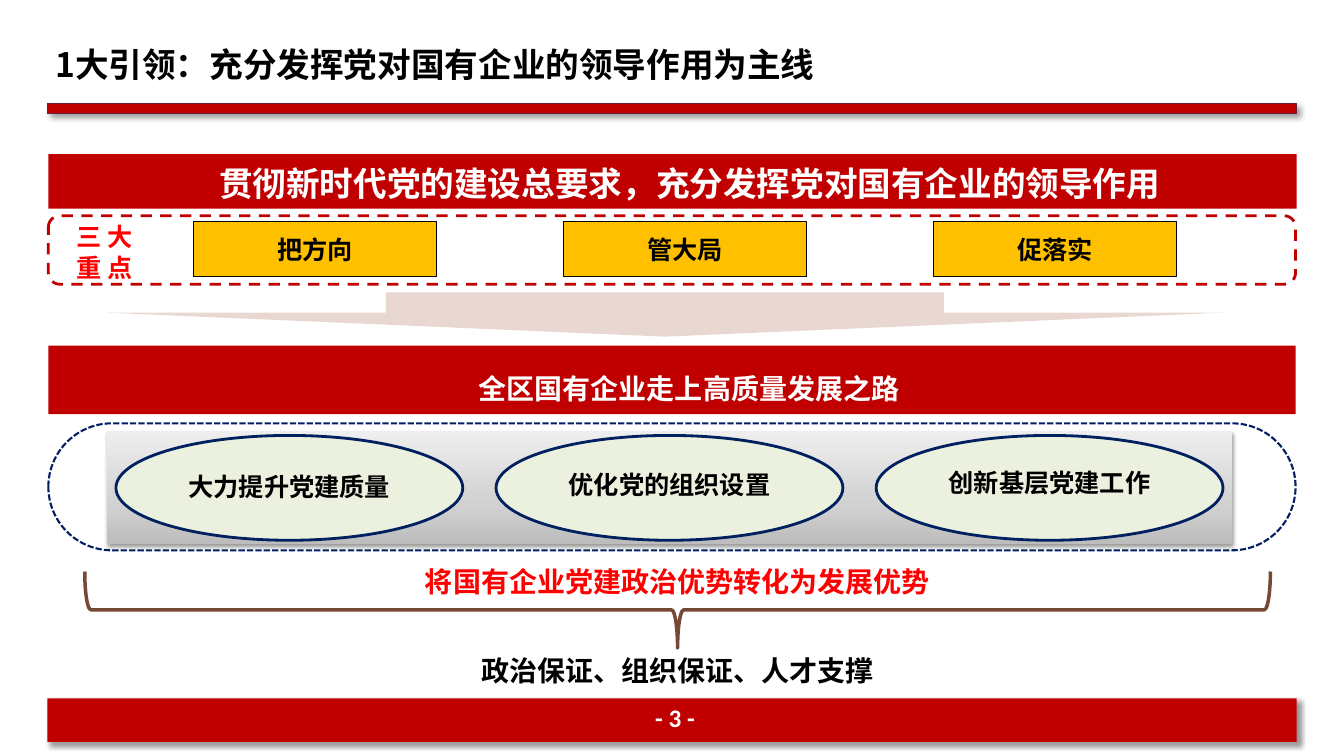
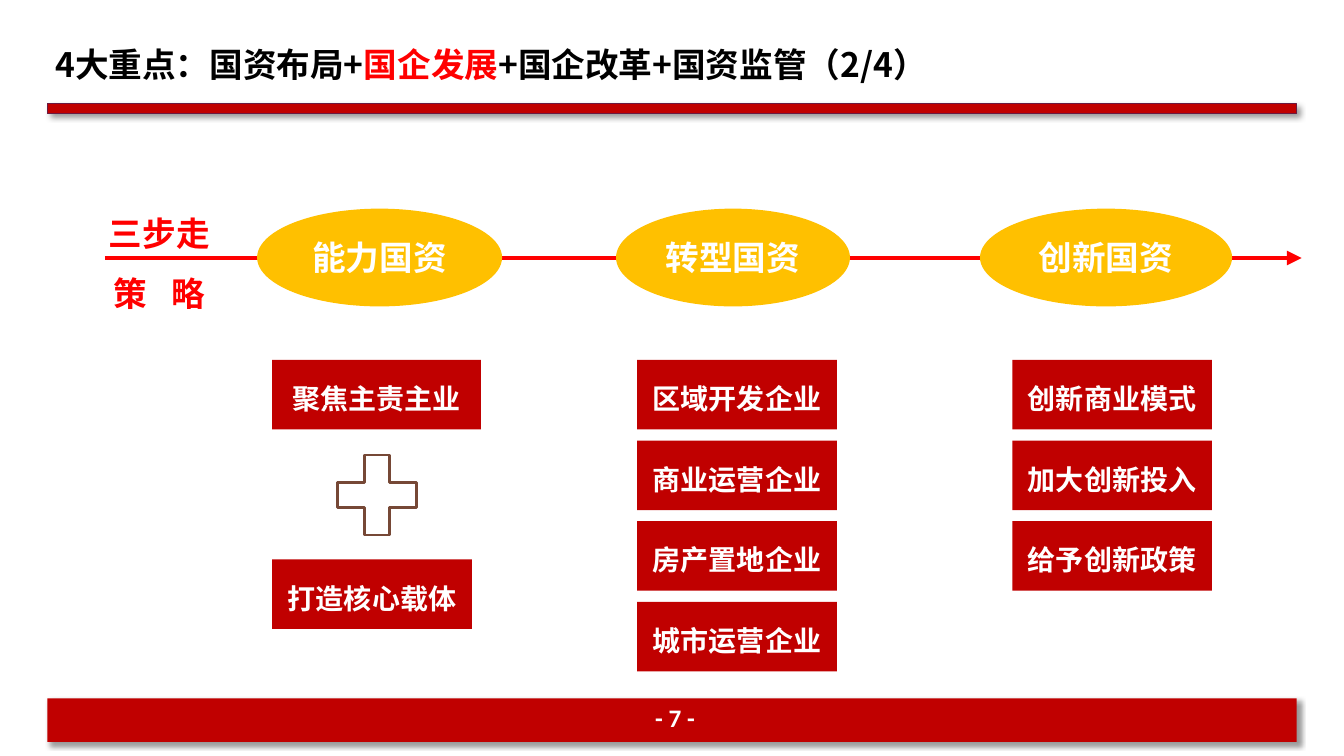
from lxml import etree
from pptx import Presentation
from pptx.dml.color import RGBColor
from pptx.enum.dml import MSO_LINE
from pptx.enum.shapes import MSO_CONNECTOR, MSO_SHAPE
from pptx.enum.text import MSO_ANCHOR, MSO_AUTO_SIZE, PP_ALIGN
from pptx.oxml.ns import qn
from pptx.util import Inches, Pt

RECTANGLE, ROUNDED, OVAL = MSO_SHAPE.RECTANGLE, MSO_SHAPE.ROUNDED_RECTANGLE, MSO_SHAPE.OVAL
DOWN_ARROW, RIGHT_BRACE, PLUS = MSO_SHAPE.DOWN_ARROW, MSO_SHAPE.RIGHT_BRACE, MSO_SHAPE.MATH_PLUS
TOP, MIDDLE, BOTTOM = MSO_ANCHOR.TOP, MSO_ANCHOR.MIDDLE, MSO_ANCHOR.BOTTOM
CENTER, JUSTIFY = PP_ALIGN.CENTER, PP_ALIGN.JUSTIFY
DASH, SHORT_DASH = MSO_LINE.DASH, MSO_LINE.SQUARE_DOT
FIT_SHAPE = MSO_AUTO_SIZE.SHAPE_TO_FIT_TEXT
STRAIGHT = MSO_CONNECTOR.STRAIGHT

DARK_RED = RGBColor(0xC0, 0x00, 0x00)
RED = RGBColor(0xFF, 0x00, 0x00)
PLUM = RGBColor(0x6A, 0x1A, 0x41)
GOLD = RGBColor(0xFF, 0xC0, 0x00)
NAVY = RGBColor(0x00, 0x20, 0x60)
PALE_GREEN = RGBColor(0xEB, 0xF1, 0xDE)
PALE_ROSE = RGBColor(0xE9, 0xD8, 0xD2)
BROWN = RGBColor(0x76, 0x48, 0x36)
BLACK = RGBColor(0x00, 0x00, 0x00)
WHITE = RGBColor(0xFF, 0xFF, 0xFF)
SILVER_STOPS = [(0, "BDBDBD"), (35, "D1D1D1"), (100, "EEEEEE")]

FONT, NUMBER_FONT = "Noto Sans CJK SC", "Calibri"
BAND_SHADOW = (40, 4, 3, 45)
PANEL_SHADOW = (38, 3.1, 1.6, 90)

LEADERSHIP = {
    "page": 3,
    "title": [("1大引领：充分发挥党对国有企业的领导作用为主线", BLACK)],
    "banner": "贯彻新时代党的建设总要求，充分发挥党对国有企业的领导作用",
    "focus_label": ["三 大", "重 点"],
    "focuses": ["把方向", "管大局", "促落实"],
    "goal": "全区国有企业走上高质量发展之路",
    "measures": ["大力提升党建质量", "优化党的组织设置", "创新基层党建工作"],
    "conversion": "将国有企业党建政治优势转化为发展优势",
    "support": "政治保证、组织保证、人才支撑",
}

DEVELOPMENT = {
    "page": 7,
    "title": [("4大重点：国资布局+", BLACK), ("国企发展", RED), ("+国企改革+国资监管（2/4）", BLACK)],
    "steps": [
        {"name": "能力国资", "oval": (2.55, 2.43), "left": 2.7, "pitch": 1.98,
         "tasks": [("聚焦主责主业", 2.07), ("打造核心载体", 1.98)]},
        {"name": "转型国资", "oval": (6.11, 2.32), "left": 6.32, "pitch": 0.8,
         "tasks": [("区域开发企业", 1.98), ("商业运营企业", 1.98),
                   ("房产置地企业", 1.98), ("城市运营企业", 1.98)]},
        {"name": "创新国资", "oval": (9.72, 2.5), "left": 10.04, "pitch": 0.8,
         "tasks": [("创新商业模式", 1.98), ("加大创新投入", 1.98), ("给予创新政策", 1.98)]},
    ],
}


def add_shadow(shape, look):
    opacity, blur, distance, angle = look
    effects = shape.element.spPr.find(qn("a:effectLst"))
    shadow = etree.SubElement(
        effects, qn("a:outerShdw"), blurRad=str(Pt(blur)), dist=str(Pt(distance)),
        dir=str(angle * 60000), algn="ctr", rotWithShape="0")
    color = etree.SubElement(shadow, qn("a:srgbClr"), val=str(BLACK))
    etree.SubElement(color, qn("a:alpha"), val=str(opacity * 1000))


def add_figure(slide, kind, box, fill=None, line=None, width=0.75, dash=None,
               adjustments=(), shadow=None):
    shape = slide.shapes.add_shape(kind, *map(Inches, box))
    shape.shadow.inherit = False
    for index, value in enumerate(adjustments):
        shape.adjustments[index] = value
    if fill is None:
        shape.fill.background()
    else:
        shape.fill.solid()
        shape.fill.fore_color.rgb = fill
    if line is None:
        shape.line.fill.background()
    else:
        shape.line.color.rgb = line
        shape.line.width = Pt(width)
        if dash is not None:
            shape.line.dash_style = dash
    if shadow:
        add_shadow(shape, shadow)
    return shape


def fill_silver(shape):
    shape.fill.gradient()
    shape.fill.gradient_angle = 90
    stops = shape.element.spPr.find(qn("a:gradFill")).find(qn("a:gsLst"))
    stops.clear()
    for position, color in SILVER_STOPS:
        stop = etree.SubElement(stops, qn("a:gs"), pos=str(position * 1000))
        etree.SubElement(stop, qn("a:srgbClr"), val=color)


def add_run(paragraph, text, size, color, font=FONT, spacing=0):
    run = paragraph.add_run()
    run.text = text
    run.font.size = Pt(size)
    run.font.bold = True
    run.font.name = font
    run.font.color.rgb = color
    properties = run.font._element
    etree.SubElement(properties, qn("a:ea"), typeface=font)
    if spacing:
        properties.set("spc", str(spacing * 100))


def write(shape, lines, size, color, anchor=MIDDLE, align=CENTER, line_spacing=None,
          indent=0, inset=None, font=FONT):
    """Each line is a string or a list of (text, color[, spacing]) runs."""
    frame = shape.text_frame
    frame.word_wrap = True
    frame.vertical_anchor = anchor
    if inset is not None:
        frame.margin_left = frame.margin_right = Inches(inset[0])
        frame.margin_top = frame.margin_bottom = Inches(inset[1])
    for index, line in enumerate(lines):
        paragraph = frame.add_paragraph() if index else frame.paragraphs[0]
        paragraph.alignment = align
        if line_spacing:
            paragraph.line_spacing = line_spacing
        if indent:
            paragraph._p.get_or_add_pPr().set("indent", str(Inches(indent)))
        runs = [(line, color)] if isinstance(line, str) else line
        for text, run_color, *spacing in runs:
            add_run(paragraph, text, size, run_color, font, *spacing)


def add_label(slide, box, lines, size, color, anchor=TOP, **style):
    label = slide.shapes.add_textbox(*map(Inches, box))
    write(label, lines, size, color, anchor, **style)
    label.text_frame.auto_size = FIT_SHAPE


def start_slide(presentation, content):
    slide = presentation.slides.add_slide(presentation.slide_layouts[6])
    add_figure(slide, RECTANGLE, (0.47, 6.93, 12.39, 0.43), DARK_RED, shadow=BAND_SHADOW)
    add_label(slide, (6.25, 6.93, 0.89, 0.38), [f"- {content['page']} -"], 18, WHITE,
              inset=(0.08, 0.04), font=NUMBER_FONT)
    add_figure(slide, RECTANGLE, (0.47, 1.03, 12.39, 0.1), DARK_RED, PLUM, shadow=BAND_SHADOW)
    add_label(slide, (0.45, 0.39, 12.46, 0.5), [content["title"]], 24, BLACK, MIDDLE,
              align=JUSTIFY)
    return slide


def build_leadership(presentation, content):
    slide = start_slide(presentation, content)

    banner = add_figure(slide, RECTANGLE, (0.48, 1.53, 12.38, 0.54), DARK_RED)
    write(banner, [content["banner"]], 24, WHITE, BOTTOM, line_spacing=1.5, indent=0.34)

    add_figure(slide, ROUNDED, (0.48, 2.14, 12.37, 0.68), None, DARK_RED, 2, DASH)
    add_label(slide, (0.48, 2.15, 1.12, 0.71), content["focus_label"], 18, RED)
    for index, focus in enumerate(content["focuses"]):
        box = add_figure(slide, RECTANGLE, (1.92 + 3.67 * index, 2.2, 2.41, 0.54), GOLD, BLACK)
        write(box, [focus], 18, BLACK)

    add_figure(slide, DOWN_ARROW, (1.06, 2.9, 11.07, 0.44), PALE_ROSE, adjustments=(0.5, 0.54))
    goal = add_figure(slide, RECTANGLE, (0.48, 3.43, 12.37, 0.68), DARK_RED)
    write(goal, [content["goal"]], 20, WHITE, line_spacing=1.5, indent=0.34)

    add_figure(slide, ROUNDED, (0.48, 4.2, 12.37, 1.26), None, NAVY, 1.5, SHORT_DASH, (0.5,))
    panel = add_figure(slide, RECTANGLE, (1.06, 4.28, 11.16, 1.12), shadow=PANEL_SHADOW)
    fill_silver(panel)
    oval_width, label_width = 3.44, 2.44
    for index, measure in enumerate(content["measures"]):
        left = 1.15 + 3.77 * index
        add_figure(slide, OVAL, (left, 4.32, oval_width, 1.04), PALE_GREEN, NAVY, 2)
        label_left = left + (oval_width - label_width) / 2
        add_label(slide, (label_left, 4.55 - 0.02 * index, label_width, 0.46), [measure],
                  18, BLACK, MIDDLE, line_spacing=1.3)

    brace = add_figure(slide, RIGHT_BRACE, (6.34, 0.17, 0.76, 11.76), None, BROWN, 2.5,
                       adjustments=(0.08, 0.5))
    brace.rotation = 90
    for key, top, color in (("conversion", 5.55, RED), ("support", 6.43, BLACK)):
        add_label(slide, (3.44, top, 6.56, 0.44), [content[key]], 20, color)


def build_development(presentation, content):
    slide = start_slide(presentation, content)

    arrow = slide.shapes.add_connector(
        STRAIGHT, Inches(1.04), Inches(2.56), Inches(12.91), Inches(2.56))
    arrow.line.color.rgb = RED
    arrow.line.width = Pt(3.5)
    etree.SubElement(arrow.line._get_or_add_ln(), qn("a:tailEnd"), type="triangle")
    etree.SubElement(arrow.element.spPr, qn("a:effectLst"))
    add_label(slide, (0.61, 1.86, 1.94, 0.97), ["三步走", [("策", RED, 17), ("略", RED)]],
              24, RED, line_spacing=1.5)

    for step in content["steps"]:
        left, width = step["oval"]
        oval = add_figure(slide, OVAL, (left, 2.07, width, 0.97), GOLD)
        write(oval, [step["name"]], 24, WHITE, inset=(0.09, 0.09))
        for index, (task, task_width) in enumerate(step["tasks"]):
            top = 3.57 + step["pitch"] * index
            box = add_figure(slide, RECTANGLE, (step["left"], top, task_width, 0.69), DARK_RED)
            write(box, [task], 20, WHITE, TOP, line_spacing=1.5)

    add_figure(slide, PLUS, (3.21, 4.37, 1.06, 1.08), WHITE, BROWN, 2)


def main():
    presentation = Presentation()
    presentation.slide_width = Inches(13.33)
    presentation.slide_height = Inches(7.5)
    build_leadership(presentation, LEADERSHIP)
    build_development(presentation, DEVELOPMENT)
    presentation.save("out.pptx")


if __name__ == "__main__":
    main()
